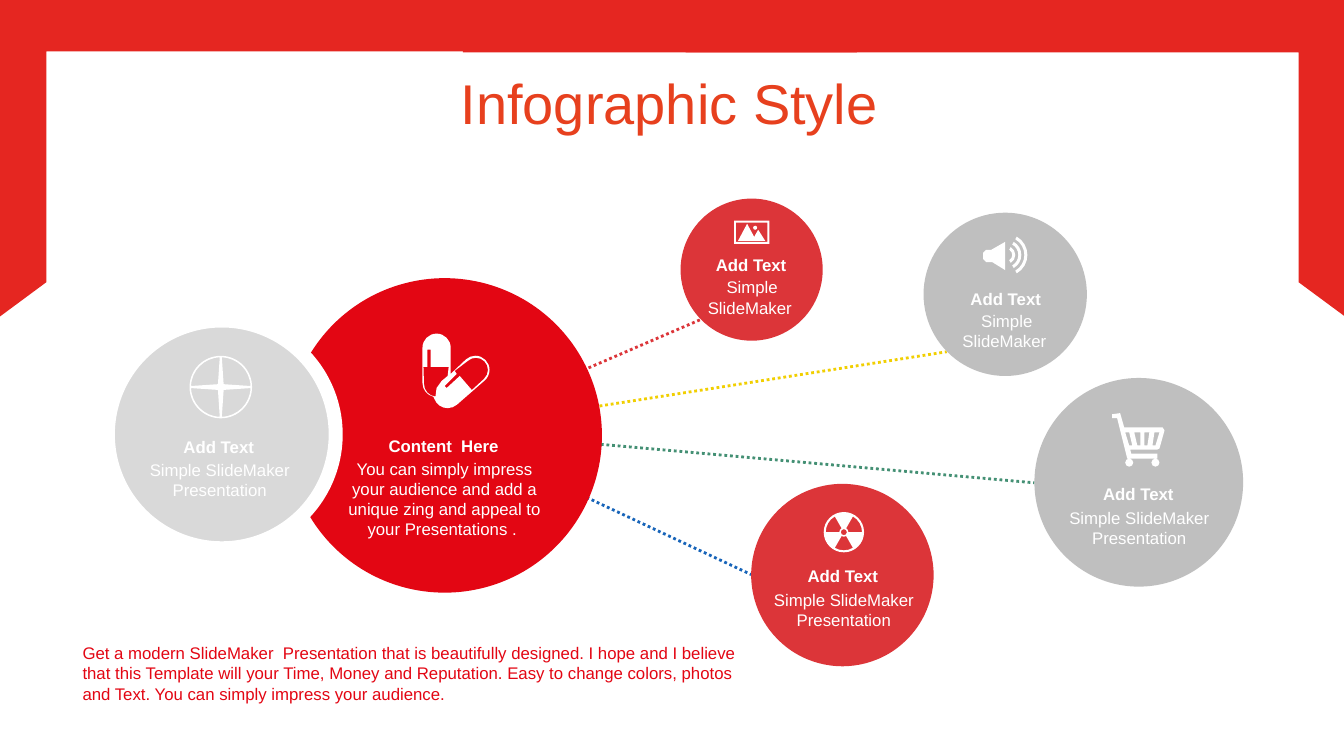
from dataclasses import dataclass
from math import cos, radians, sin, tan

from lxml import etree
from pptx import Presentation
from pptx.dml.color import RGBColor
from pptx.enum.dml import MSO_LINE
from pptx.enum.shapes import MSO_CONNECTOR, MSO_SHAPE
from pptx.enum.text import MSO_ANCHOR, MSO_AUTO_SIZE, PP_ALIGN
from pptx.oxml.ns import qn
from pptx.util import Pt

EMU_PER_PX = 9144
SLIDE_WIDTH, SLIDE_HEIGHT = 1333, 750
FONT = "Arial"
TITLE_ONLY = 5
CENTER, LEFT = PP_ALIGN.CENTER, PP_ALIGN.LEFT
TOP, MIDDLE = MSO_ANCHOR.TOP, MSO_ANCHOR.MIDDLE
FIT_SHAPE, NO_FIT = MSO_AUTO_SIZE.SHAPE_TO_FIT_TEXT, MSO_AUTO_SIZE.NONE
ELLIPSE, RECTANGLE = MSO_SHAPE.OVAL, MSO_SHAPE.RECTANGLE
STRAIGHT, DOTTED = MSO_CONNECTOR.STRAIGHT, MSO_LINE.ROUND_DOT

WHITE = RGBColor(0xFF, 0xFF, 0xFF)
FRAME_RED = RGBColor(0xE5, 0x26, 0x21)
TITLE_ORANGE = RGBColor(0xE7, 0x40, 0x1E)
HUB_RED = RGBColor(0xE3, 0x06, 0x13)
NODE_RED = RGBColor(0xDC, 0x35, 0x39)
NODE_GRAY = RGBColor(0xBF, 0xBF, 0xBF)
LIGHT_GRAY = RGBColor(0xD9, 0xD9, 0xD9)
YELLOW = RGBColor(0xF1, 0xCF, 0x01)
GREEN = RGBColor(0x44, 0x90, 0x74)
BLUE = RGBColor(0x17, 0x64, 0xB9)

Contour = list[tuple[float, ...]]


@dataclass
class Spoke:
    x: int
    y: int
    color: RGBColor


@dataclass
class Disc:
    left: int
    top: int
    diameter: int
    color: RGBColor
    outline: int = 0


@dataclass
class Label:
    left: int
    top: int
    width: int
    body_top: int
    body_height: int
    body: str
    heading: str = "Add Text"
    anchor: MSO_ANCHOR = TOP


HUB = (440, 427)
SPOKES = [Spoke(695, 317, NODE_RED), Spoke(939, 349, YELLOW),
          Spoke(1026, 479, GREEN), Spoke(745, 570, BLUE)]
DISCS = [Disc(285, 276, 312, HUB_RED), Disc(107, 318, 226, LIGHT_GRAY, 10),
         Disc(745, 480, 181, NODE_RED), Disc(916, 211, 162, NODE_GRAY),
         Disc(675, 197, 141, NODE_RED), Disc(1026, 375, 207, NODE_GRAY)]
LONG_BODY = "Simple SlideMaker Presentation"
SHORT_BODY = "Simple SlideMaker "
HUB_BODY = ("You can simply impress your audience and add a unique zing "
            "and appeal to your Presentations . ")
LABELS = [Label(123, 428, 188, 451, 50, LONG_BODY),
          Label(332, 427, 216, 450, 91, HUB_BODY, "Content  Here", MIDDLE),
          Label(742, 556, 188, 580, 50, LONG_BODY),
          Label(927, 282, 141, 303, 50, SHORT_BODY),
          Label(681, 248, 128, 270, 50, SHORT_BODY),
          Label(1035, 475, 188, 499, 50, LONG_BODY)]
FOOTER = ("Get a modern SlideMaker  Presentation that is beautifully designed. "
          "I hope and I believe that this Template will your Time, Money and "
          "Reputation. Easy to change colors, photos and Text. "
          "You can simply impress your audience.")


def px(value: float) -> int:
    return round(value * EMU_PER_PX)


def arc(x: float, y: float, radius: float, start: int, end: int) -> Contour:
    low, high = sorted((start, end))
    corners = [a for a in range(-360, 361, 90) if low < a < high]
    stops = sorted([low, *corners, high], reverse=start > end)
    nodes: Contour = [(x + radius * cos(radians(start)), y + radius * sin(radians(start)))]
    for first, last in zip(stops, stops[1:]):
        a, b = radians(first), radians(last)
        pull = 4 / 3 * tan((b - a) / 4)
        nodes.append((x + radius * (cos(a) - pull * sin(a)),
                      y + radius * (sin(a) + pull * cos(a)),
                      x + radius * (cos(b) + pull * sin(b)),
                      y + radius * (sin(b) - pull * cos(b)),
                      x + radius * cos(b), y + radius * sin(b)))
    return nodes


def circle(x: float, y: float, radius: float) -> Contour:
    return arc(x, y, radius, 0, 360)


def box(left: int, top: int, right: int, bottom: int) -> Contour:
    return [(left, top), (right, top), (right, bottom), (left, bottom)]


def compass() -> list[Contour]:
    x, y = 219, 384
    quarters = [arc(x, y, 29.5, turn + 2, turn + 88)
                + arc(x, y, 4, turn + 45, turn + 45)[:1]
                for turn in range(0, 360, 90)]
    return [circle(x, y, 31)] + quarters


def radiation() -> list[Contour]:
    x, y = 837, 528
    blades = [arc(x, y, 18, turn, turn + 60) + arc(x, y, 4.5, turn + 60, turn)
              for turn in (60, 180, 300)]
    return [circle(x, y, 20), circle(x, y, 3)] + blades


def loudspeaker() -> list[Contour]:
    waves = [arc(998, 253, radius, -60, 60) + arc(998, 253, radius - 3, 60, -60)
             for radius in (9, 15, 21)]
    horn = [(997, 240), (997, 268), (984, 260), (978, 260), (975, 257),
            (975, 251), (978, 248), (983, 248)]
    return [horn] + waves


def landscape() -> list[Contour]:
    hills = [(741, 222), (748, 235), (752, 228), (759, 239), (732, 239)]
    return [box(728, 219, 763, 242), box(730, 221, 761, 240), hills,
            circle(749, 226, 2)]


def cart() -> list[Contour]:
    body = [(1103, 411), (1110, 410), (1111, 410), (1115, 424), (1153, 424),
            (1155, 427), (1150, 445), (1148, 446), (1121, 446), (1122, 450),
            (1148, 450), (1148, 455), (1118, 455), (1108, 415), (1103, 415)]
    slats = [[(1145, 429), (1143, 442), (1146, 442), (1150, 429)],
             [(1135, 429), (1135, 442), (1138, 442), (1140, 429)],
             [(1125, 429), (1128, 442), (1131, 442), (1131, 429)],
             [(1116, 429), (1120, 442), (1123, 442), (1120, 429)]]
    return [body, *slats, circle(1120, 459, 4), circle(1146, 459, 4)]


def pills() -> list[Contour]:
    outline = (arc(433, 345, 14, 180, 360) + [(447, 371)]
               + arc(471.5, 367, 14, -132, 48) + arc(444, 391, 14, 48, 160)
               + arc(433, 380, 14, 103, 180))
    tilted = ([(453, 371), (441, 383), (443, 385), (456, 373), (468, 387)]
              + arc(472, 367, 12, 48, -132) + [(451, 368)])
    upright = (arc(433, 381, 12.5, 180, 95)
               + [(433, 385), (438, 378), (444, 373), (445, 364), (427, 364),
                  (427, 347), (424, 347), (424, 364), (420, 364)])
    return [outline, tilted, upright]


def paint(shape, color: RGBColor, outline: int = 0) -> None:
    shape.shadow.inherit = False
    shape.fill.solid()
    shape.fill.fore_color.rgb = color
    if outline:
        shape.line.color.rgb = WHITE
        shape.line.width = Pt(outline)
    else:
        shape.line.fill.background()


def add_outline(slide, contours: list[Contour], color: RGBColor) -> None:
    scaled = [[tuple(map(px, node)) for node in contour] for contour in contours]
    builder = slide.shapes.build_freeform(*scaled[0][0], scale=1.0)
    for index, contour in enumerate(scaled):
        if index:
            builder.move_to(*contour[0])
        builder.add_line_segments([node[-2:] for node in contour[1:]], close=True)
    shape = builder.convert_to_shape()
    steps = list(shape._element.iter(qn("a:moveTo"), qn("a:lnTo")))
    for step, node in zip(steps, [node for contour in scaled for node in contour]):
        if len(node) == 6:
            step.tag = qn("a:cubicBezTo")
            for position in (0, 2):
                control = etree.Element(qn("a:pt"), x=str(node[position] - shape.left),
                                        y=str(node[position + 1] - shape.top))
                step.insert(position // 2, control)
    paint(shape, color)


def add_preset(slide, kind: MSO_SHAPE, bounds: tuple[int, int, int, int],
               color: RGBColor, outline: int = 0) -> None:
    paint(slide.shapes.add_shape(kind, *map(px, bounds)), color, outline)


def add_spoke(slide, spoke: Spoke) -> None:
    connector = slide.shapes.add_connector(STRAIGHT, *map(px, (*HUB, spoke.x, spoke.y)))
    connector.line.color.rgb = spoke.color
    connector.line.width = Pt(2)
    connector.line.dash_style = DOTTED
    etree.SubElement(connector._element.spPr, qn("a:effectLst"))


def write(shape, text: str, size: int, color: RGBColor, bold: bool = False,
          alignment: PP_ALIGN = CENTER, anchor: MSO_ANCHOR = TOP,
          fit: MSO_AUTO_SIZE = FIT_SHAPE) -> None:
    frame = shape.text_frame
    frame.word_wrap = True
    frame.auto_size = fit
    frame.vertical_anchor = anchor
    paragraph = frame.paragraphs[0]
    paragraph.alignment = alignment
    run = paragraph.add_run()
    run.text = text
    run.font.name, run.font.size, run.font.bold = FONT, Pt(size), bold
    run.font.color.rgb = color


def add_label(slide, label: Label) -> None:
    heading = slide.shapes.add_textbox(*map(px, (label.left, label.top, label.width, 30)))
    write(heading, label.heading, 12, WHITE, bold=True, anchor=label.anchor)
    body = slide.shapes.add_textbox(
        *map(px, (label.left + 1, label.body_top, label.width, label.body_height)))
    write(body, label.body, 12, WHITE)


def frame_side(bottom: int) -> Contour:
    return [(46, 280), (0, 314), (0, 0), (654, 0), (654, bottom), (46, bottom)]


def add_frame(slide) -> None:
    add_outline(slide, [[(SLIDE_WIDTH + 1 - x, y) for x, y in frame_side(52)]], FRAME_RED)
    add_outline(slide, [frame_side(51)], FRAME_RED)
    add_preset(slide, RECTANGLE, (459, 0, 391, 52), FRAME_RED)


def add_title(slide) -> None:
    title = slide.shapes.title
    title.left, title.top, title.width, title.height = map(px, (87, 66, 1153, 79))
    write(title, "Infographic Style", 40, TITLE_ORANGE, anchor=MIDDLE, fit=NO_FIT)
    title.text_frame.paragraphs[0].line_spacing = 0.9


def main() -> None:
    presentation = Presentation()
    presentation.slide_width, presentation.slide_height = px(SLIDE_WIDTH), px(SLIDE_HEIGHT)
    slide = presentation.slides.add_slide(presentation.slide_layouts[TITLE_ONLY])
    add_frame(slide)
    add_title(slide)
    for spoke in SPOKES:
        add_spoke(slide, spoke)
    for disc in DISCS:
        bounds = (disc.left, disc.top, disc.diameter, disc.diameter)
        add_preset(slide, ELLIPSE, bounds, disc.color, disc.outline)
    for label in LABELS:
        add_label(slide, label)
    for icon in (cart, loudspeaker, radiation, landscape, pills, compass):
        add_outline(slide, icon(), WHITE)
    footer = slide.shapes.add_textbox(*map(px, (72, 633, 671, 71)))
    write(footer, FOOTER, 12, HUB_RED, alignment=LEFT)
    presentation.save("out.pptx")


if __name__ == "__main__":
    main()
